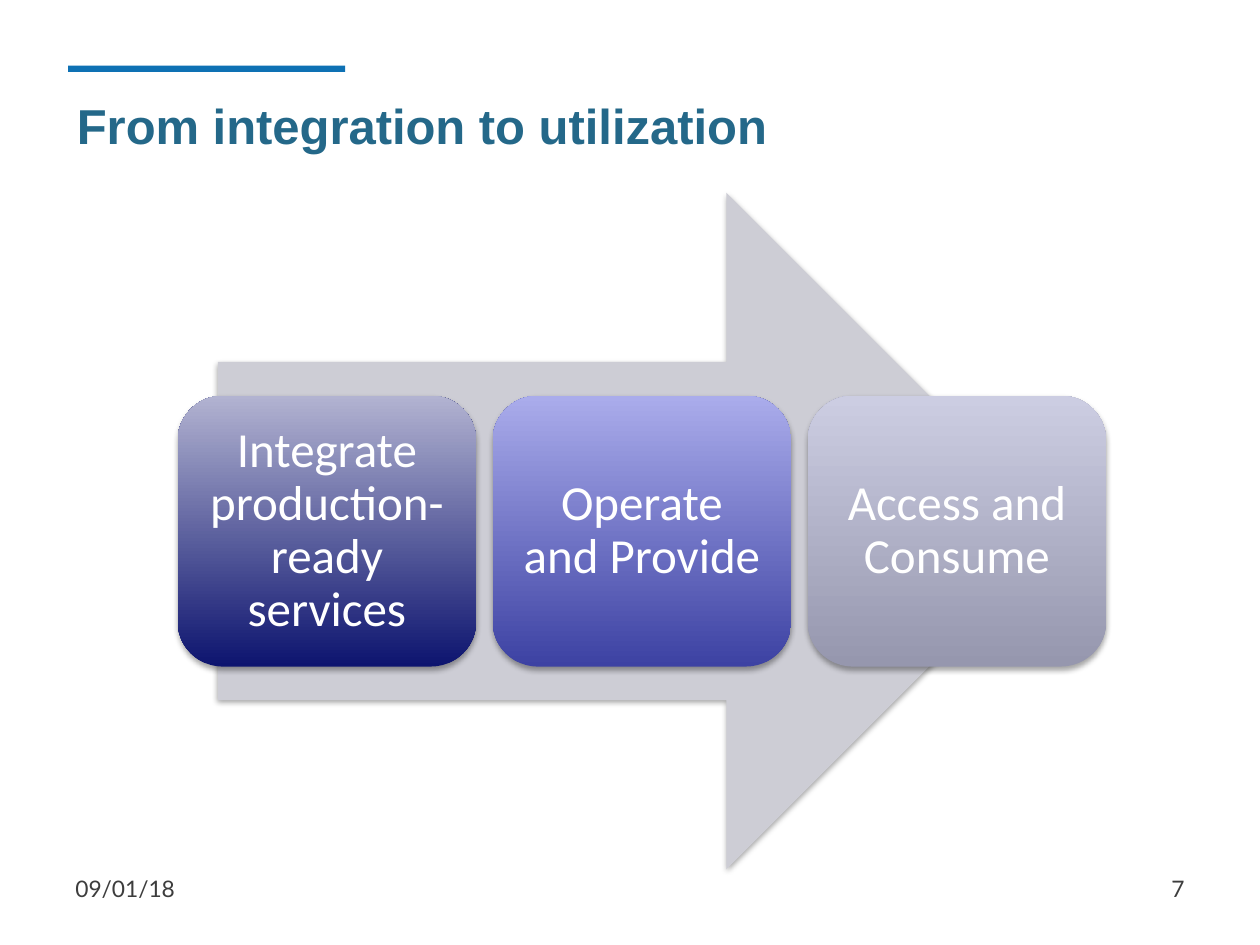
from lxml.etree import SubElement
from pptx import Presentation
from pptx.dml.color import RGBColor
from pptx.enum.shapes import MSO_SHAPE as Shape
from pptx.enum.text import MSO_ANCHOR as Anchor, PP_ALIGN as Align
from pptx.oxml.ns import qn
from pptx.util import Inches, Pt

COLORS = {
    "accent": "0E71B4",
    "title": "246889",
    "footer": "3D3D3D",
    "arrow": "CDCDD5",
    "white": "FFFFFF",
    "shadow": "000000",
}
TITLE = "From integration to utilization"
STAGES = [
    ("Integrate production-ready services", "0D146F", "B2B3D1"),
    ("Operate and Provide", "3D42A3", "AAACEB"),
    ("Access and Consume", "9697AE", "CCCDE2"),
]
FOOTERS = [("09/01/18", 0.5, Align.LEFT), ("7", 7.17, Align.RIGHT)]

STAGE_LEFT, STAGE_TOP = 1.41, 3.14
STAGE_WIDTH, STAGE_HEIGHT = 2.37, 2.15
STAGE_STEP = 2.5


def write(holder, text, size, font, color, bold=False, align=Align.LEFT,
          anchor=Anchor.TOP, spacing=None, inset=None):
    frame = holder.text_frame
    frame.word_wrap = True
    frame.vertical_anchor = anchor
    if inset is not None:
        frame.margin_left = frame.margin_right = Inches(inset)
        frame.margin_top = frame.margin_bottom = Inches(inset)
    paragraph = frame.paragraphs[0]
    paragraph.alignment = align
    paragraph.line_spacing = spacing
    run = paragraph.add_run()
    run.text = text
    run.font.size = Pt(size)
    run.font.name = font
    run.font.bold = bold
    run.font.color.rgb = RGBColor.from_string(COLORS[color])


def add_block(slide, kind, left, top, width, height, fills, shadow=True):
    block = slide.shapes.add_shape(
        kind, Inches(left), Inches(top), Inches(width), Inches(height))
    block.shadow.inherit = False
    block.line.fill.background()
    if len(fills) == 1:
        block.fill.solid()
        block.fill.fore_color.rgb = RGBColor.from_string(fills[0])
    else:
        block.fill.gradient()
        block.fill.gradient_angle = 90
        for stop, color, position in zip(block.fill.gradient_stops, fills, (0, 1)):
            stop.color.rgb = RGBColor.from_string(color)
            stop.position = position
    if shadow:
        effects = block.element.spPr.find(qn("a:effectLst"))
        outer = SubElement(effects, qn("a:outerShdw"), blurRad=str(Pt(3.1)),
                           dist=str(Pt(1.8)), dir="5400000", rotWithShape="0")
        tone = SubElement(outer, qn("a:srgbClr"), val=COLORS["shadow"])
        SubElement(tone, qn("a:alpha"), val="35000")
    return block


def main():
    deck = Presentation()
    deck.slide_width, deck.slide_height = Inches(10), Inches(7.5)
    slide = deck.slides.add_slide(deck.slide_layouts[5])

    add_block(slide, Shape.RECTANGLE, 0.54, 0.52, 2.2, 0.05,
              [COLORS["accent"]], shadow=False)

    for text, left, align in FOOTERS:
        footer = slide.shapes.add_textbox(
            Inches(left), Inches(6.89), Inches(2.33), Inches(0.4))
        write(footer, text, 13, "Lato", "footer", align=align)

    title = slide.shapes.title
    title.left, title.top = Inches(0.51), Inches(0.68)
    title.width, title.height = Inches(5.98), Inches(0.63)
    write(title, TITLE, 28, "Arial", "title", bold=True, anchor=Anchor.MIDDLE)

    add_block(slide, Shape.RIGHT_ARROW, 1.73, 1.53, 6.72, 5.37, [COLORS["arrow"]])

    for index, (text, *gradient) in enumerate(STAGES):
        stage = add_block(slide, Shape.ROUNDED_RECTANGLE,
                          STAGE_LEFT + index * STAGE_STEP, STAGE_TOP,
                          STAGE_WIDTH, STAGE_HEIGHT, gradient)
        write(stage, text, 28, "Calibri", "white", align=Align.CENTER,
              anchor=Anchor.MIDDLE, spacing=0.9, inset=0.12)

    deck.save("out.pptx")


if __name__ == "__main__":
    main()
